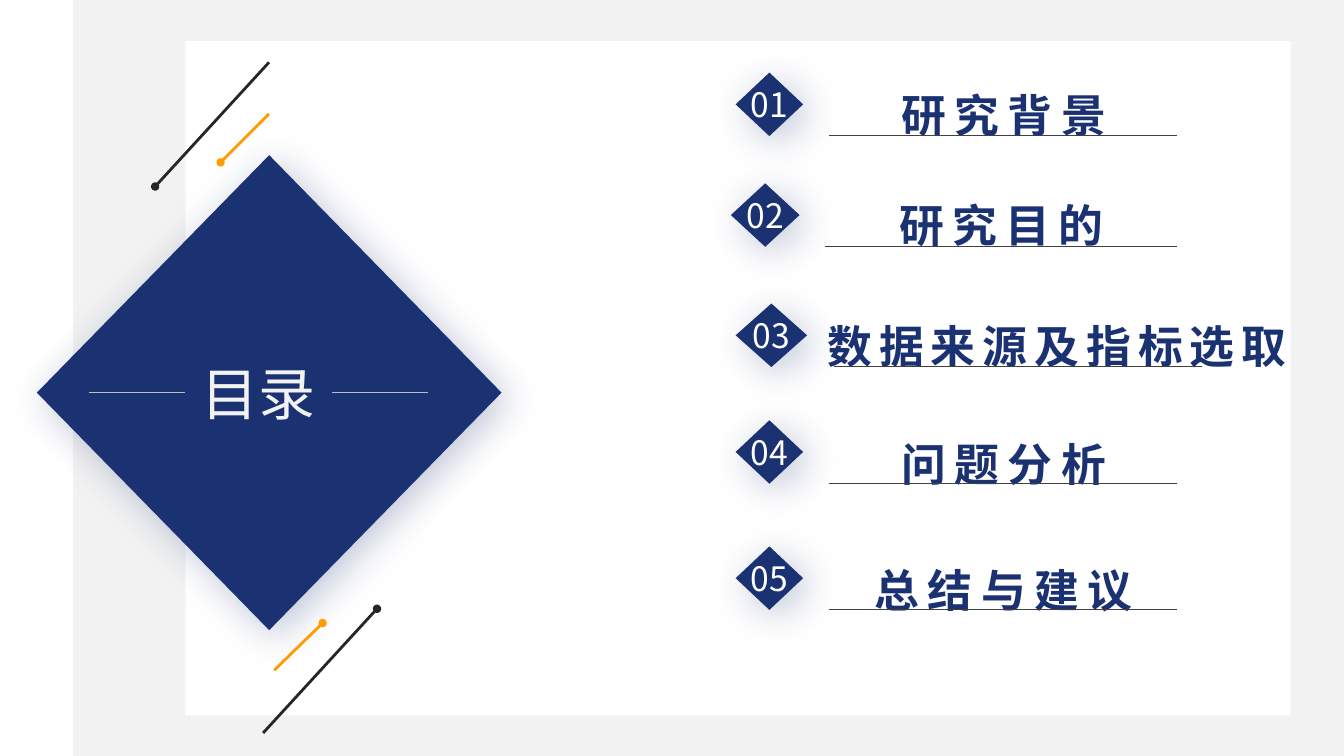
from dataclasses import dataclass

from lxml.etree import SubElement
from pptx import Presentation
from pptx.dml.color import RGBColor
from pptx.enum.shapes import MSO_CONNECTOR as Connector, MSO_SHAPE as Preset
from pptx.enum.text import MSO_ANCHOR as Anchor, MSO_AUTO_SIZE as AutoSize, PP_ALIGN as Align
from pptx.oxml.ns import qn
from pptx.shapes.autoshape import Shape
from pptx.shapes.connector import Connector as Line
from pptx.slide import Slide
from pptx.util import Cm, Pt

NAVY, ORANGE, BLACK = "1A3172", "FF9C00", "262626"
WHITE, PALE, SILVER, GREY = "FFFFFF", "F2F2F2", "BFBFBF", "404040"
CJK_FONT = "Noto Sans CJK JP"


@dataclass(frozen=True)
class Box:
    left: float
    top: float
    width: float
    height: float

    def lengths(self) -> tuple[Cm, Cm, Cm, Cm]:
        return Cm(self.left), Cm(self.top), Cm(self.width), Cm(self.height)


@dataclass(frozen=True)
class TextStyle:
    font: str
    size: float
    color: str
    bold: bool = False
    tracking: float = 0
    line_spacing: float = 1.0
    anchor: Anchor = Anchor.MIDDLE


@dataclass(frozen=True)
class Stroke:
    """A slanted line whose far end carries a dot."""
    start: tuple[float, float]
    dot: tuple[float, float]
    color: str


@dataclass(frozen=True)
class Entry:
    title: str
    top: float
    title_rise: float = 0.43
    tracking: float = 6
    diamond: tuple[float, float] = (18.54, 1.70)
    title_span: tuple[float, float] = (20.75, 9.09)
    underline: tuple[float, float] = (20.88, 29.67)


PANELS = [
    (Box(0, 0, 1.85, 19.05), WHITE),
    (Box(1.85, 0, 32.02, 19.05), PALE),
    (Box(4.67, 1.04, 27.86, 16.99), WHITE),
]
STROKES = [
    Stroke((6.78, 1.57), (3.91, 4.70), BLACK),
    Stroke((6.78, 2.87), (5.56, 4.09), ORANGE),
    Stroke((6.63, 18.47), (9.50, 15.34), BLACK),
    Stroke((6.91, 16.89), (8.13, 15.70), ORANGE),
]
ENTRIES = [
    Entry("研究背景", 1.83),
    Entry("研究目的", 4.62, diamond=(18.42, 1.73), title_span=(20.65, 9.17),
          underline=(20.78, 29.67)),
    Entry("数据来源及指标选取", 7.65, tracking=5, diamond=(18.54, 1.80),
          title_span=(21.84, 9.60), underline=(21.01, 30.30)),
    Entry("问题分析", 10.59, title_rise=0.38),
    Entry("总结与建议", 13.77, title_rise=0.38),
]


def rgb(color: str) -> RGBColor:
    return RGBColor.from_string(color)


def add_filled(slide: Slide, preset: Preset, box: Box, color: str) -> Shape:
    shape = slide.shapes.add_shape(preset, *box.lengths())
    shape.shadow.inherit = False
    shape.fill.solid()
    shape.fill.fore_color.rgb = rgb(color)
    shape.line.fill.background()
    return shape


def add_diamond(slide: Slide, box: Box) -> Shape:
    """Add a navy diamond with a soft navy shadow."""
    diamond = add_filled(slide, Preset.DIAMOND, box, NAVY)
    effects = diamond.element.spPr.find(qn("a:effectLst"))
    shadow = SubElement(effects, qn("a:outerShdw"), blurRad=str(Pt(28)), dist=str(Pt(7)),
                        dir=str(45 * 60000), algn="tl", rotWithShape="0")
    tint = SubElement(shadow, qn("a:srgbClr"), val=NAVY)
    SubElement(tint, qn("a:alpha"), val="27000")
    return diamond


def write_text(shape: Shape, text: str, style: TextStyle) -> None:
    frame = shape.text_frame
    frame.word_wrap = False
    frame.auto_size = AutoSize.NONE
    frame.vertical_anchor = style.anchor
    paragraph = frame.paragraphs[0]
    paragraph.alignment = Align.CENTER
    paragraph.line_spacing = style.line_spacing
    run = paragraph.add_run()
    run.text = text
    formats = {"name": style.font, "size": Pt(style.size), "bold": style.bold}
    for attribute, value in formats.items():
        setattr(run.font, attribute, value)
    run.font.color.rgb = rgb(style.color)
    properties = run.font._element
    properties.set("spc", str(round(style.tracking * 100)))
    SubElement(properties, qn("a:ea"), typeface=style.font)


def add_text(slide: Slide, box: Box, text: str, style: TextStyle) -> Shape:
    text_box = slide.shapes.add_textbox(*box.lengths())
    write_text(text_box, text, style)
    return text_box


def add_line(slide: Slide, start: tuple[float, float], end: tuple[float, float],
             color: str, width: float = 0.5) -> Line:
    line = slide.shapes.add_connector(Connector.STRAIGHT, *map(Cm, start + end))
    line.line.color.rgb = rgb(color)
    line.line.width = Pt(width)
    SubElement(line.element.spPr, qn("a:effectLst"))
    return line


def add_heading(slide: Slide) -> None:
    add_diamond(slide, Box(0.93, 3.91, 11.71, 11.97))
    box = Box(4.67, 8.99, 3.70, 1.80)
    heading = add_text(slide, box, "目录", TextStyle("Arial", 40.7, PALE))
    middle, right, length = box.top + box.height / 2, box.left + box.width, 2.42
    for side, near, far in ((1, box.left, box.left - length), (3, right, right + length)):
        rule = add_line(slide, (near, middle), (far, middle), SILVER)
        rule.begin_connect(heading, side)


def add_stroke(slide: Slide, stroke: Stroke) -> None:
    line = add_line(slide, stroke.start, stroke.dot, stroke.color, 2)
    SubElement(line.line._get_or_add_ln(), qn("a:tailEnd"), type="oval")


def add_entry(slide: Slide, number: int, entry: Entry) -> None:
    left, width = entry.diamond
    diamond = add_diamond(slide, Box(left, entry.top, width, 1.60))
    write_text(diamond, f"{number:02}", TextStyle(CJK_FONT, 24, WHITE))
    left, width = entry.title_span
    style = TextStyle(CJK_FONT, 32, NAVY, True, entry.tracking, 1.5, Anchor.TOP)
    add_text(slide, Box(left, entry.top - entry.title_rise, width, 1.55), entry.title, style)
    start, end = entry.underline
    height = entry.top + 1.58
    add_line(slide, (start, height), (end, height), GREY)


def main() -> None:
    presentation = Presentation()
    presentation.slide_width, presentation.slide_height = Cm(33.87), Cm(19.05)
    slide = presentation.slides.add_slide(presentation.slide_layouts[6])
    slide.background.fill.solid()
    slide.background.fill.fore_color.rgb = rgb(PALE)
    for box, color in PANELS:
        add_filled(slide, Preset.RECTANGLE, box, color)
    add_heading(slide)
    for stroke in STROKES:
        add_stroke(slide, stroke)
    for number, entry in enumerate(ENTRIES, start=1):
        add_entry(slide, number, entry)
    presentation.save("out.pptx")


if __name__ == "__main__":
    main()
